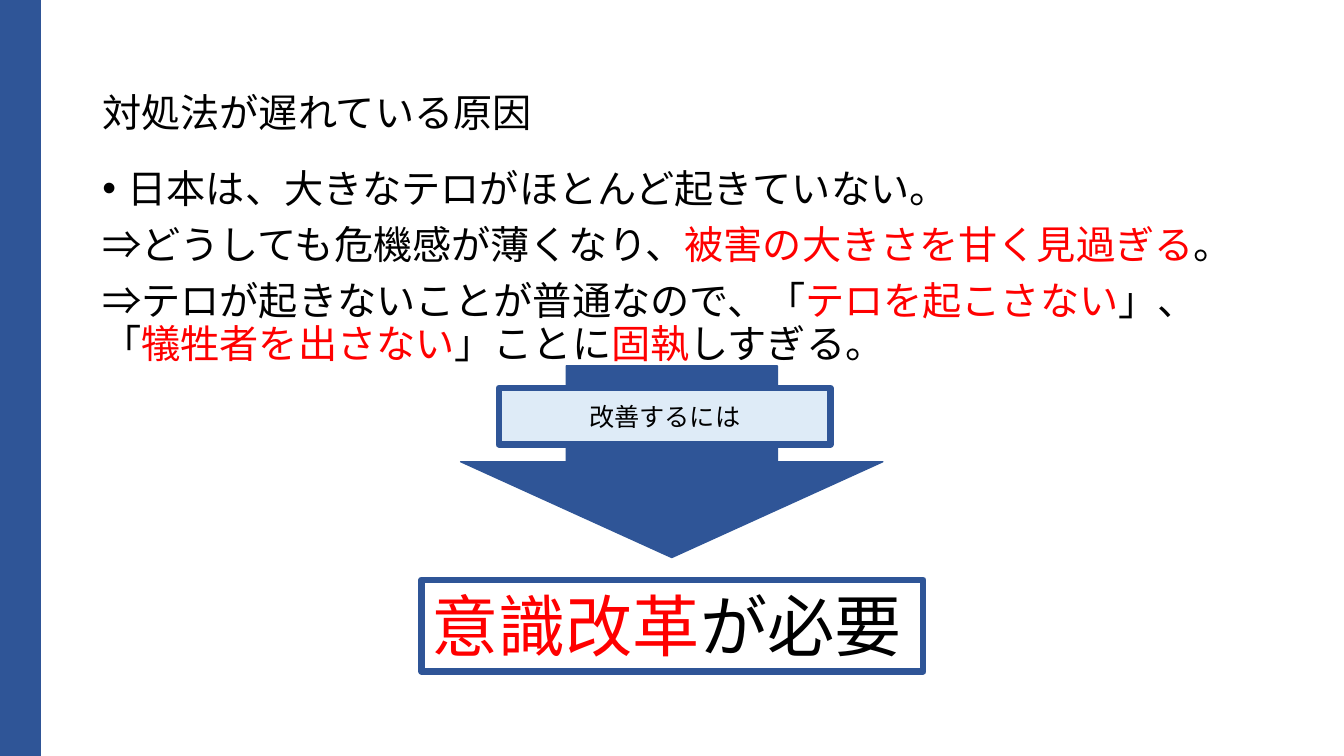
import pptx
import pptx.util
import pptx.dml.color
import pptx.enum.shapes
import pptx.enum.text
from lxml import etree

Cm, Pt = pptx.util.Cm, pptx.util.Pt
SHAPE = pptx.enum.shapes.MSO_SHAPE
ANCHOR = pptx.enum.text.MSO_ANCHOR
ALIGN = pptx.enum.text.PP_ALIGN

# Content: each paragraph is a list of (text, colour) spans
BLACK, RED, BLUE, PALE = "000000", "FF0000", "2F5597", "DEEBF7"
LATIN, JAPANESE = "Calibri", "Noto Sans CJK JP"

TITLE = [[("対処法が遅れている原因", BLACK)]]
REASONS = [
    [("日本は、大きなテロがほとんど起きていない。", BLACK)],
    [("⇒どうしても危機感が薄くなり、", BLACK),
     ("被害の大きさを甘く見過ぎる", RED), ("。", BLACK)],
    [("⇒テロが起きないことが普通なので、「", BLACK),
     ("テロを起こさない", RED), ("」、「", BLACK),
     ("犠牲者を出さない", RED), ("」ことに", BLACK),
     ("固執", RED), ("しすぎる。", BLACK)],
]
PROMPT = [[("改善するには", BLACK)]]
CONCLUSION = [[("意識改革", RED), ("が必要", BLACK)]]

# Places in cm: left, top, width, height
SLIDE = (33.87, 19.05)
TITLE_AT = (2.33, 1.7, 11.71, 2.39)
REASONS_AT = (2.33, 4.14, 29.21, 5.69)
CONCLUSION_AT = (10.62, 14.61, 12.65, 2.31)
BAND_AT = (0, 0, 1.02, SLIDE[1])
ARROW_AT = (11.61, 9.22, 10.64, 4.83)
PROMPT_AT = (12.57, 9.78, 8.36, 1.42)


def colour(hex_string):
    return pptx.dml.color.RGBColor.from_string(hex_string)


def write(box, paragraphs, size, font=LATIN, anchor=ANCHOR.TOP,
          align=ALIGN.LEFT, spacing=None, before=0):
    frame = box.text_frame
    frame.word_wrap = True
    frame.vertical_anchor = anchor
    for index, spans in enumerate(paragraphs):
        para = frame.paragraphs[0] if index == 0 else frame.add_paragraph()
        para.alignment = align
        para.line_spacing = spacing
        para.space_before = Pt(before)
        for text, hex_string in spans:
            span = para.add_run()
            span.text = text
            span.font.size = Pt(size)
            span.font.name = font
            span.font.color.rgb = colour(hex_string)
            east_asian = etree.SubElement(
                span.font._element, pptx.oxml.ns.qn("a:ea"))
            east_asian.set("typeface", JAPANESE)


def add_outlined(parent, kind, place, fill, width):
    shape = parent.add_shape(kind, *map(Cm, place))
    shape.shadow.inherit = False
    if fill:
        shape.fill.solid()
        shape.fill.fore_color.rgb = colour(fill)
    else:
        shape.fill.background()
    shape.line.color.rgb = colour(BLUE)
    shape.line.width = Pt(width)
    return shape


def add_bullet(para, indent):
    properties = para._p.get_or_add_pPr()
    properties.set("marL", str(indent))
    properties.set("indent", str(-indent))
    for tag, key, value in (("a:buFont", "typeface", "Arial"),
                            ("a:buChar", "char", "•")):
        etree.SubElement(properties, pptx.oxml.ns.qn(tag)).set(key, value)


deck = pptx.Presentation()
deck.slide_width, deck.slide_height = map(Cm, SLIDE)
page = deck.slides.add_slide(deck.slide_layouts[6])
shapes = page.shapes

# Title and reasons
title = shapes.add_textbox(*map(Cm, TITLE_AT))
write(title, TITLE, 28, anchor=ANCHOR.MIDDLE, spacing=0.9)
reasons = shapes.add_textbox(*map(Cm, REASONS_AT))
write(reasons, REASONS, 28, spacing=0.9, before=10)
add_bullet(reasons.text_frame.paragraphs[0], Cm(0.64))

# Conclusion and side band
conclusion = add_outlined(shapes, SHAPE.RECTANGLE, CONCLUSION_AT, None, 4.5)
write(conclusion, CONCLUSION, 48)
etree.SubElement(conclusion.line._get_or_add_ln(), pptx.oxml.ns.qn("a:round"))
add_outlined(shapes, SHAPE.RECTANGLE, BAND_AT, BLUE, 1)

# Arrow with its prompt
group = shapes.add_group_shape()
add_outlined(group.shapes, SHAPE.DOWN_ARROW, ARROW_AT, BLUE, 1)
prompt = add_outlined(group.shapes, SHAPE.RECTANGLE, PROMPT_AT, PALE, 4.5)
write(prompt, PROMPT, 18, font=JAPANESE, anchor=ANCHOR.MIDDLE,
      align=ALIGN.CENTER)

deck.save("out.pptx")
